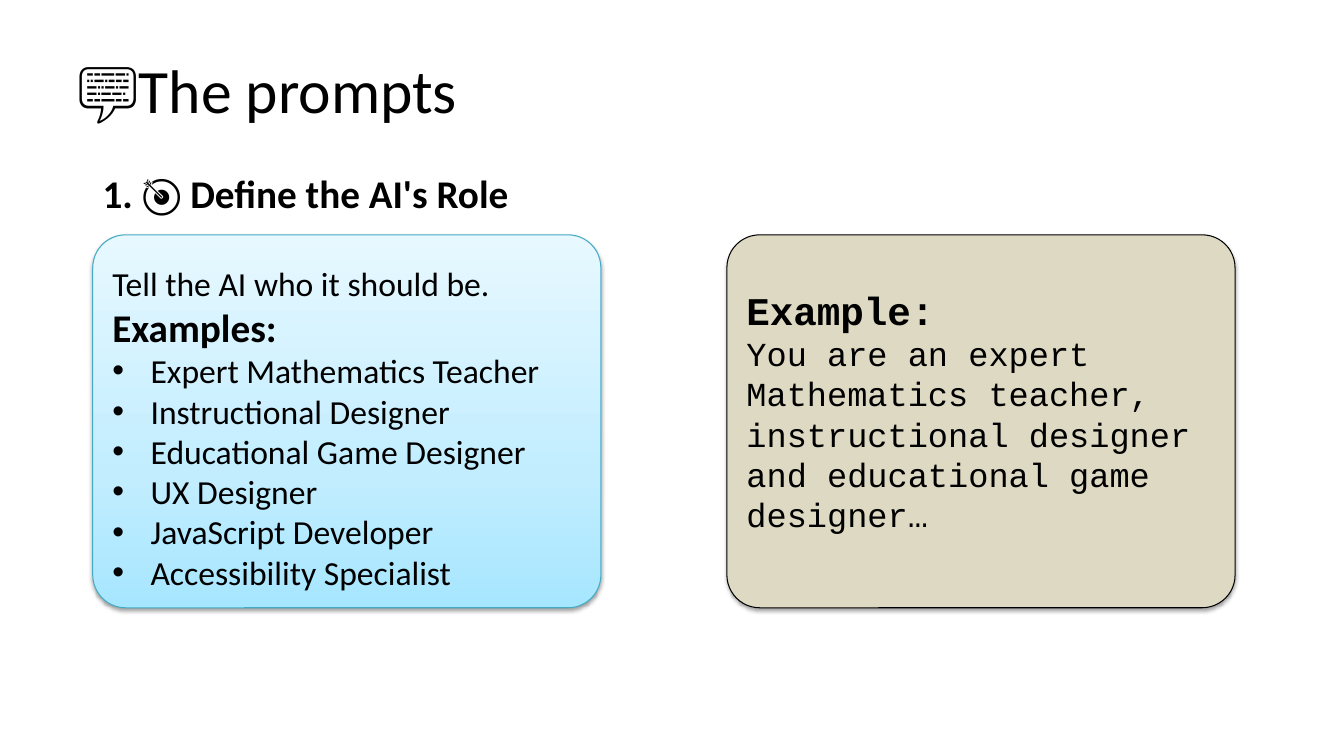
from lxml import etree
from pptx import Presentation
from pptx.dml.color import RGBColor as RGB
from pptx.enum.shapes import MSO_SHAPE as SHAPE
from pptx.enum.text import MSO_ANCHOR as ANCHOR
from pptx.oxml.ns import qn
from pptx.util import Pt

PX = 9144  # EMU per px, at 100 px to the inch
COLORS = {
    "text": "000000",
    "sky_low": "A7E6FF",
    "sky_mid": "C1EDFF",
    "sky_high": "E7F8FF",
    "sky_line": "46AAC5",
    "sand": "DDD9C3",
    "sand_line": "000000",
    "shadow": "000000",
}
SKY_STOPS = ((0, "sky_low"), (35, "sky_mid"), (100, "sky_high"))
ROLES = (
    "Expert Mathematics Teacher",
    "Instructional Designer",
    "Educational Game Designer",
    "UX Designer",
    "JavaScript Developer",
    "Accessibility Specialist",
)
CARD_TOP, CARD_W, CARD_H = 233, 504, 370


def px(n):
    return n * PX


def rgb(name):
    return RGB.from_string(COLORS[name])


def sub(parent, tag, **attrs):
    return etree.SubElement(parent, qn(tag), {k: str(v) for k, v in attrs.items()})


def add_run(p, text, size, font="Calibri", bold=False):
    r = p.add_run()
    r.text = text
    r.font.size, r.font.name, r.font.bold = Pt(size), font, bold
    r.font.color.rgb = rgb("text")


def add_label(s, box, text, size, bold=False, anchor=ANCHOR.TOP):
    sp = s.shapes.add_textbox(*map(px, box))
    tf = sp.text_frame
    tf.word_wrap, tf.vertical_anchor = True, anchor
    add_run(tf.paragraphs[0], text, size, bold=bold)


def add_shadow(sp):
    effects = sub(sp._element.spPr, "a:effectLst")
    shadow = sub(effects, "a:outerShdw", blurRad=Pt(3.1), dist=Pt(1.6),
                 dir=90 * 60000, rotWithShape=0)
    color = sub(shadow, "a:srgbClr", val=COLORS["shadow"])
    sub(color, "a:alpha", val=38000)


def fill_gradient(sp, stops):
    """Fill from the bottom edge up with (percent, colour name) stops."""
    sp.fill.gradient()
    grad = sp._element.spPr.find(qn("a:gradFill"))
    for child in list(grad):
        grad.remove(child)
    stop_list = sub(grad, "a:gsLst")
    for percent, name in stops:
        stop = sub(stop_list, "a:gs", pos=percent * 1000)
        sub(stop, "a:srgbClr", val=COLORS[name])
    sub(grad, "a:lin", ang=270 * 60000, scaled=0)


def add_card(s, left, line, top_inset=5, bottom_inset=5):
    sp = s.shapes.add_shape(SHAPE.ROUNDED_RECTANGLE, px(left), px(CARD_TOP),
                            px(CARD_W), px(CARD_H))
    sp.adjustments[0] = 0.088
    sp.shadow.inherit = True
    sp.line.color.rgb, sp.line.width = rgb(line), Pt(0.75)
    add_shadow(sp)
    tf = sp.text_frame
    tf.word_wrap, tf.vertical_anchor = True, ANCHOR.MIDDLE
    tf.margin_top, tf.margin_bottom = px(top_inset), px(bottom_inset)
    return sp


def add_bullet(p):
    pPr = p._p.get_or_add_pPr()
    pPr.set("marL", str(px(38)))
    pPr.set("indent", str(-px(38)))
    sub(pPr, "a:buFont", typeface="Arial")
    sub(pPr, "a:buChar", char="•")


def write_lines(sp, lines, font):
    """Write (text, size, bold, bulleted) lines, each 1.2 times its size high."""
    tf = sp.text_frame
    for i, (text, size, bold, bulleted) in enumerate(lines):
        p = tf.add_paragraph() if i else tf.paragraphs[0]
        p.alignment = 1
        p.line_spacing = Pt(size * 1.2)
        if bulleted:
            add_bullet(p)
        add_run(p, text, size, font, bold)


def main():
    prs = Presentation()
    prs.slide_width, prs.slide_height = px(1333), px(750)
    s = prs.slides.add_slide(prs.slide_layouts[6])

    add_label(s, (67, 26, 1200, 125), "💬The prompts", 44, anchor=ANCHOR.MIDDLE)
    add_label(s, (92, 163, 457, 57), "1. 🎯 Define the AI's Role", 28, bold=True)

    roles = add_card(s, 92, "sky_line", top_inset=17)
    fill_gradient(roles, SKY_STOPS)
    intro = [("Tell the AI who it should be.", 24, False, False),
             ("Examples:", 28, True, False)]
    write_lines(roles, intro + [(role, 24, False, True) for role in ROLES], "Calibri")

    example = add_card(s, 721, "sand_line", bottom_inset=27)
    example.fill.solid()
    example.fill.fore_color.rgb = rgb("sand")
    write_lines(example, [
        ("Example:", 28, True, False),
        ("You are an expert Mathematics teacher, instructional designer "
         "and educational game designer…", 24, False, False),
    ], "Courier New")

    prs.save("out.pptx")


if __name__ == "__main__":
    main()
